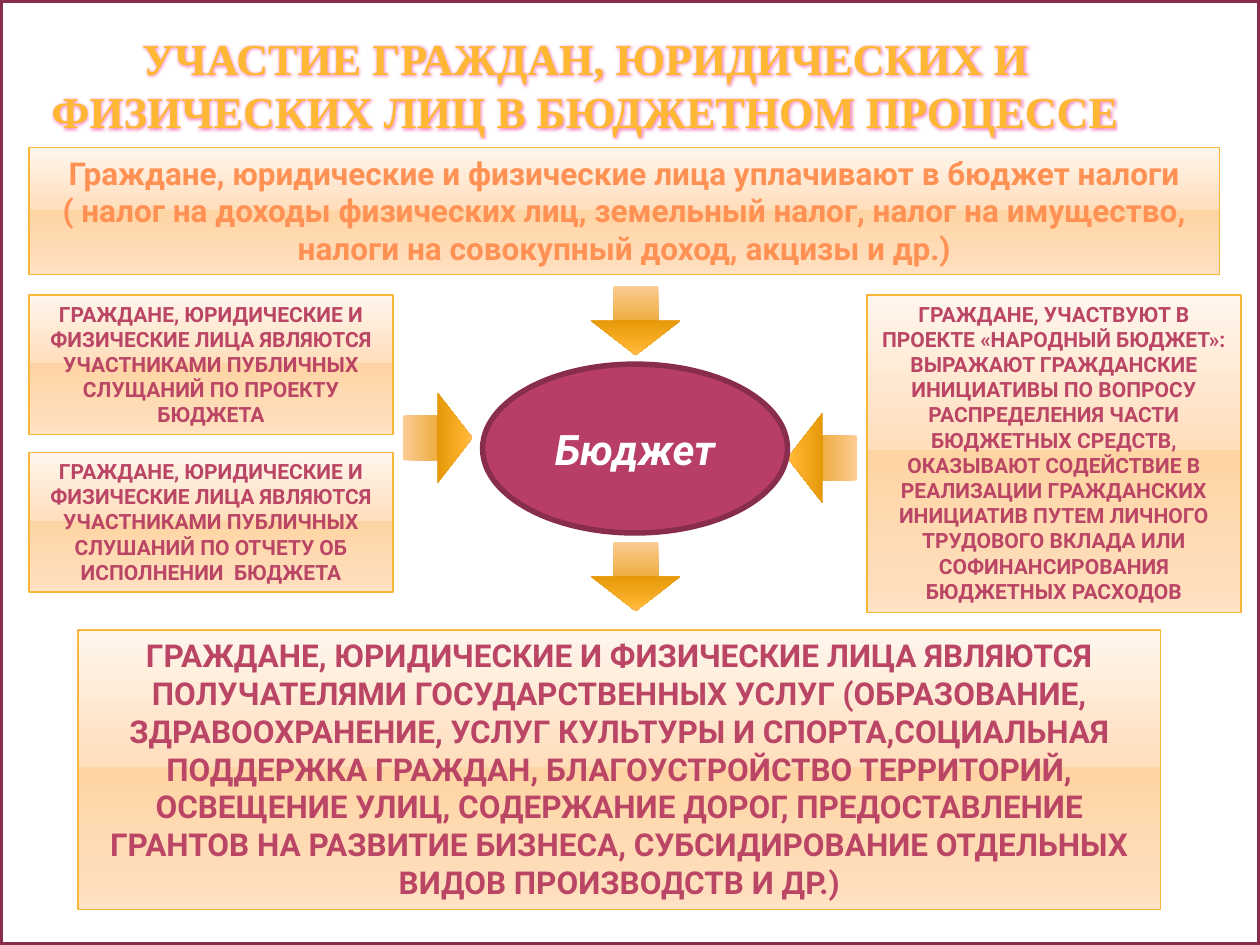
from lxml.etree import SubElement
from pptx import Presentation
from pptx.dml.color import RGBColor
from pptx.enum.shapes import MSO_SHAPE as Kind
from pptx.enum.text import MSO_ANCHOR as Anchor, MSO_AUTO_SIZE as Fit, PP_ALIGN as Align
from pptx.oxml.ns import qn
from pptx.util import Inches, Pt

PLUM = RGBColor(0x88, 0x2D, 0x4D)
BERRY = RGBColor(0xB8, 0x3D, 0x68)
ROSE = RGBColor(0xBA, 0x45, 0x65)
GOLD = RGBColor(0xFF, 0xB8, 0x33)
AMBER = RGBColor(0xF9, 0xB6, 0x39)
CORAL = RGBColor(0xFF, 0x91, 0x54)
PINK = RGBColor(0xF5, 0x8F, 0xC0)
WHITE = RGBColor(0xFF, 0xFF, 0xFF)

CREAM = [(0, "FFF6ED"), (49, "FFDEBC"), (49, "FFD4A4"), (92, "FFDEBC"), (100, "FFE3C7")]
HONEY = [(0, "FBCC93"), (49, "EFAE43"), (49, "E59807"), (92, "FFB432"), (100, "FFBE5F")]

TITLE = "УЧАСТИЕ ГРАЖДАН, ЮРИДИЧЕСКИХ И ФИЗИЧЕСКИХ ЛИЦ В БЮДЖЕТНОМ ПРОЦЕССЕ"
TAXES = [
    "Граждане, юридические и физические лица уплачивают в бюджет налоги",
    "( налог на доходы физических лиц, земельный налог, налог на имущество, "
    "налоги на совокупный доход, акцизы и др.)",
]
PEOPLE = "ГРАЖДАНЕ, ЮРИДИЧЕСКИЕ И ФИЗИЧЕСКИЕ ЛИЦА ЯВЛЯЮТСЯ "
NOTES = [
    (0.62, 5, 8.59, 2.22, 18, PEOPLE
     + "ПОЛУЧАТЕЛЯМИ ГОСУДАРСТВЕННЫХ УСЛУГ (ОБРАЗОВАНИЕ, ЗДРАВООХРАНЕНИЕ, "
     "УСЛУГ КУЛЬТУРЫ И СПОРТА,СОЦИАЛЬНАЯ ПОДДЕРЖКА ГРАЖДАН, БЛАГОУСТРОЙСТВО "
     "ТЕРРИТОРИЙ, ОСВЕЩЕНИЕ УЛИЦ, СОДЕРЖАНИЕ ДОРОГ, ПРЕДОСТАВЛЕНИЕ ГРАНТОВ НА "
     "РАЗВИТИЕ БИЗНЕСА, СУБСИДИРОВАНИЕ ОТДЕЛЬНЫХ ВИДОВ ПРОИЗВОДСТВ И ДР.)"),
    (0.23, 2.34, 2.89, 1.11, 12, PEOPLE
     + "УЧАСТНИКАМИ ПУБЛИЧНЫХ СЛУЩАНИЙ ПО ПРОЕКТУ БЮДЖЕТА"),
    (0.23, 3.59, 2.89, 1.11, 12, PEOPLE
     + "УЧАСТНИКАМИ ПУБЛИЧНЫХ СЛУШАНИЙ ПО ОТЧЕТУ ОБ ИСПОЛНЕНИИ  БЮДЖЕТА"),
    (6.88, 2.34, 2.97, 2.52, 12,
     "ГРАЖДАНЕ, УЧАСТВУЮТ В ПРОЕКТЕ «НАРОДНЫЙ БЮДЖЕТ»: ВЫРАЖАЮТ ГРАЖДАНСКИЕ "
     "ИНИЦИАТИВЫ ПО ВОПРОСУ РАСПРЕДЕЛЕНИЯ ЧАСТИ БЮДЖЕТНЫХ СРЕДСТВ, ОКАЗЫВАЮТ "
     "СОДЕЙСТВИЕ В РЕАЛИЗАЦИИ ГРАЖДАНСКИХ ИНИЦИАТИВ ПУТЕМ ЛИЧНОГО ТРУДОВОГО "
     "ВКЛАДА ИЛИ СОФИНАНСИРОВАНИЯ БЮДЖЕТНЫХ РАСХОДОВ"),
]
ARROWS = [(4.69, 2.27, 0), (4.69, 4.3, 0), (3.12, 3.2, 270), (6.17, 3.36, 90)]


class Board:
    face = "Roboto"

    def __init__(self, slide):
        self.slide = slide

    def shape(self, kind, x, y, w, h, line=None, width=0):
        item = self.slide.shapes.add_shape(kind, Inches(x), Inches(y), Inches(w), Inches(h))
        item.shadow.inherit = False
        if line is None:
            item.line.fill.background()
        else:
            item.line.color.rgb = line
            item.line.width = Pt(width)
        return item

    def blend(self, item, stops):
        item.fill.gradient()
        item.fill.gradient_angle = 270
        ramp = item._element.spPr.find(qn("a:gradFill")).find(qn("a:gsLst"))
        for old in list(ramp):
            ramp.remove(old)
        for place, tint in stops:
            stop = SubElement(ramp, qn("a:gs"), pos=str(place * 1000))
            SubElement(stop, qn("a:srgbClr"), val=tint)

    def label(self, item, lines, size, color, anchor=Anchor.TOP, face=None, italic=False):
        frame = item.text_frame
        frame.word_wrap = True
        frame.vertical_anchor = anchor
        frame.text = "\n".join(lines)
        for para in frame.paragraphs:
            para.alignment = Align.CENTER
            font = para.font
            font.name = face or self.face
            font.size = Pt(size)
            font.bold = True
            font.italic = italic
            font.color.rgb = color
        return frame

    def title(self, x, y, w, h, text):
        item = self.slide.shapes.add_textbox(Inches(x), Inches(y), Inches(w), Inches(h))
        frame = self.label(item, [text], 25.2, GOLD, Anchor.BOTTOM, "Times New Roman")
        frame.margin_left = frame.margin_right = Inches(0.05)
        frame.margin_top = frame.margin_bottom = 0
        props = frame.paragraphs[0].runs[0]._r.get_or_add_rPr()
        effect = SubElement(props, qn("a:effectLst"))
        glow = SubElement(effect, qn("a:glow"), rad=str(Pt(3)))
        SubElement(glow, qn("a:srgbClr"), val=str(PINK))

    def frame(self, w, h):
        self.shape(Kind.RECTANGLE, 0, 0, w, h, PLUM, 3.15).fill.background()

    def box(self, x, y, w, h, size, lines, color=ROSE):
        item = self.shape(Kind.RECTANGLE, x, y, w, h, AMBER, 0.9)
        self.blend(item, CREAM)
        self.label(item, lines, size, color).auto_size = Fit.SHAPE_TO_FIT_TEXT

    def arrow(self, x, y, turn):
        item = self.shape(Kind.DOWN_ARROW, x, y, 0.71, 0.55)
        item.rotation = turn
        self.blend(item, HONEY)

    def oval(self, x, y, w, h, text):
        item = self.shape(Kind.OVAL, x, y, w, h, PLUM, 3.15)
        item.fill.solid()
        item.fill.fore_color.rgb = BERRY
        self.label(item, [text], 24, WHITE, Anchor.MIDDLE, italic=True)


def main():
    deck = Presentation()
    deck.slide_width, deck.slide_height = Inches(10), Inches(7.5)
    board = Board(deck.slides.add_slide(deck.slide_layouts[6]))
    board.frame(10, 7.5)
    board.title(0.31, 0, 8.67, 1.09, TITLE)
    board.box(0.23, 1.17, 9.45, 1.01, 18, TAXES, CORAL)
    for *place, size, text in NOTES:
        board.box(*place, size, [text])
    for x, y, turn in ARROWS:
        board.arrow(x, y, turn)
    board.oval(3.83, 2.89, 2.42, 1.34, "Бюджет")
    deck.save("out.pptx")


if __name__ == "__main__":
    main()
